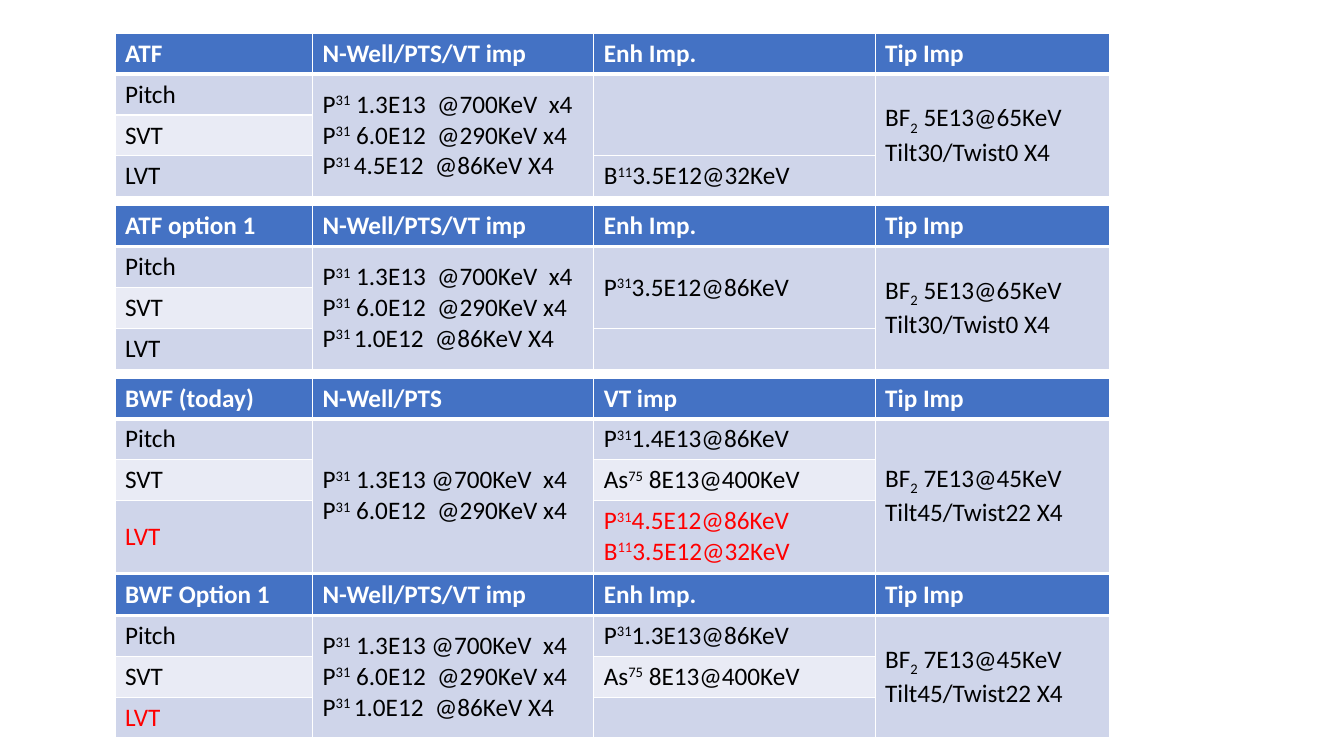
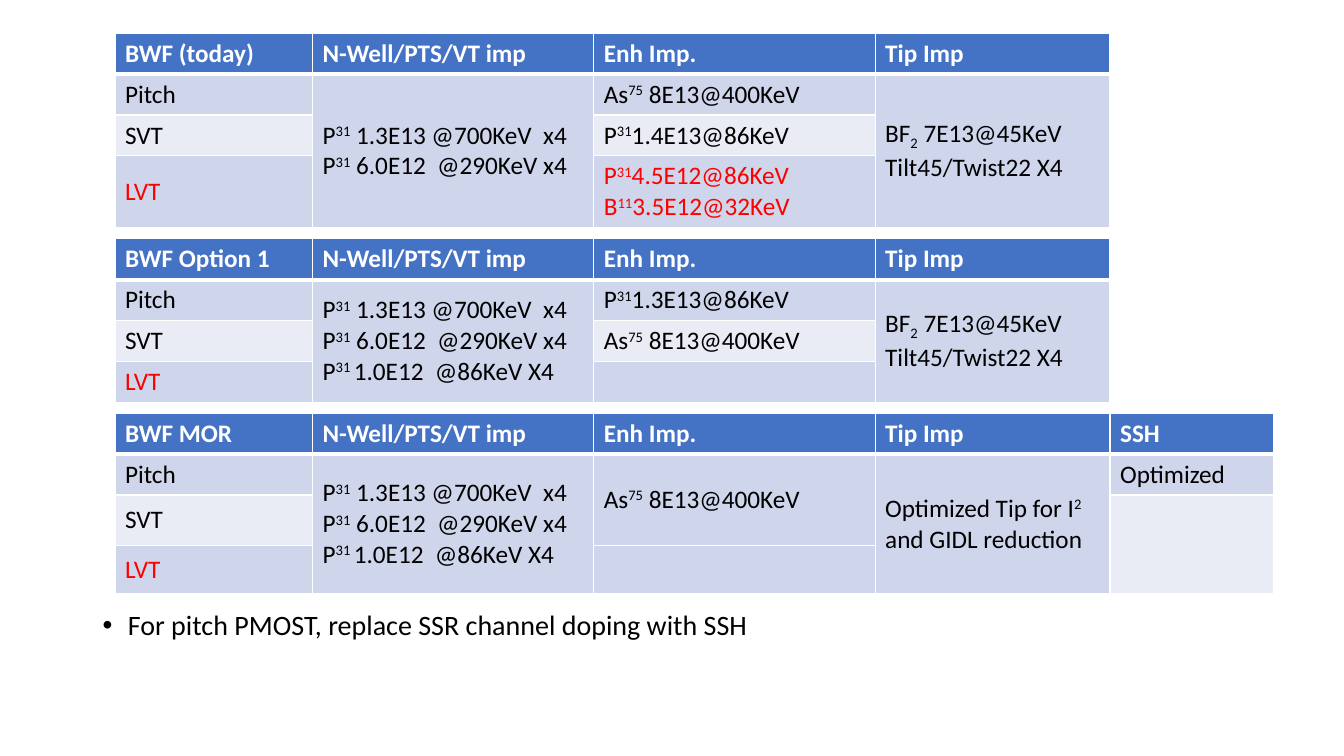
import pptx
import pptx.dml.color
import pptx.enum.text
import pptx.oxml
import pptx.oxml.ns
import pptx.util
from pptx.util import Inches

# Shared layout and table content
TABLE_LEFT = 1.14
COLUMN_WIDTHS = [1.96, 2.79, 2.79, 2.33, 1.62]
ROW_HEIGHTS = [0.4, 0.4, 0.4, 0.4]
TWO_LINE_HEIGHTS = [0.4, 0.4, 0.4, 0.7]
MOR_HEIGHTS = [0.4, 0.4, 0.5, 0.48]

# In a column, None continues the cell above; {^..} is raised, {_..} lowered
DEVICES = ["Pitch", "SVT", "LVT"]
ATF_HEADS = ["N-Well/PTS/VT imp", "Enh Imp.", "Tip Imp"]
ATF_WELL = "P{^31} 1.3E13  @700KeV  x4\nP{^31} 6.0E12  @290KeV x4"
BWF_WELL = "P{^31} 1.3E13 @700KeV  x4\nP{^31} 6.0E12  @290KeV x4"
LOW_WELL = "\nP{^31 }1.0E12  @86KeV X4"
ATF_TIP = "BF{_2} 5E13@65KeV Tilt30/Twist0 X4"
BWF_TIP = "BF{_2} 7E13@45KeV Tilt45/Twist22 X4"
ARSENIC = "As{^75} 8E13@400KeV"
PITCH_TODAY = "P{^31}1.4E13@86KeV"
BORON = "B{^11}3.5E12@32KeV"
LVT_TODAY = "P{^31}4.5E12@86KeV\n" + BORON
OPTION_ENH = ["P{^31}1.3E13@86KeV", ARSENIC, ""]


def color(hex_string):
    return pptx.dml.color.RGBColor.from_string(hex_string)


def merged(text):
    return [text, None, None]


def script_pieces(line):
    """Split a line into (text, baseline) pairs."""
    head, *tails = line.split("{")
    pieces = [(head, 0)]
    for tail in tails:
        script, rest = tail[1:].split("}")
        pieces += [(script, 30000 if tail[0] == "^" else -25000), (rest, 0)]
    return [piece for piece in pieces if piece[0]]


class Deck:
    FONT = "Calibri"
    WHITE, BLACK, RED = "FFFFFF", "000000", "FF0000"
    HEADER = "4472C4"
    BANDS = ["E9EBF5", "CFD5EA"]

    def __init__(self):
        self.presentation = pptx.Presentation()
        self.presentation.slide_width = Inches(13.33)
        self.presentation.slide_height = Inches(7.5)
        self.slide = None

    def add_slide(self):
        self.slide = self.presentation.slides.add_slide(
            self.presentation.slide_layouts[6])

    def style(self, run, size, ink, bold=False):
        run.font.name = self.FONT
        run.font.size = pptx.util.Pt(size)
        run.font.bold = bold
        run.font.color.rgb = color(ink)

    def border(self, cell, row):
        properties = cell._tc.get_or_add_tcPr()
        for side in "LRTB":
            under_header = (row, side) in [(0, "B"), (1, "T")]
            width = pptx.util.Pt(3 if under_header else 1)
            properties.append(pptx.oxml.parse_xml(
                f'<a:ln{side} {pptx.oxml.ns.nsdecls("a")} w="{width}">'
                f'<a:solidFill><a:srgbClr val="{self.WHITE}"/></a:solidFill>'
                f'</a:ln{side}>'))

    def fill_cell(self, cell, row, text, ink):
        self.border(cell, row)
        cell.fill.solid()
        cell.fill.fore_color.rgb = color(
            self.BANDS[row % 2] if row else self.HEADER)
        cell.vertical_anchor = pptx.enum.text.MSO_ANCHOR.MIDDLE
        frame = cell.text_frame
        for index, line in enumerate((text or "").split("\n")):
            paragraph = frame.add_paragraph() if index else frame.paragraphs[0]
            for piece, baseline in script_pieces(line):
                run = paragraph.add_run()
                run.text = piece
                self.style(run, 18, ink, bold=row == 0)
                if baseline:
                    run._r.get_or_add_rPr().set("baseline", str(baseline))

    def implant_table(self, top, title, heads, columns, heights=ROW_HEIGHTS,
                      lvt_ink=RED):
        contents = [[head, *body] for head, body in
                    zip([title, *heads], [DEVICES, *columns])]
        widths = COLUMN_WIDTHS[:len(contents)]
        table = self.slide.shapes.add_table(
            len(heights), len(widths), Inches(TABLE_LEFT), Inches(top),
            Inches(sum(widths)), Inches(sum(heights))).table
        for row, height in enumerate(heights):
            table.rows[row].height = Inches(height)
        inks = [self.WHITE, self.BLACK, self.BLACK, lvt_ink]
        for col, cells in enumerate(contents):
            table.columns[col].width = Inches(widths[col])
            start = 0
            for row, text in enumerate(cells):
                self.fill_cell(table.cell(row, col), row, text, inks[row])
                if text is not None:
                    start = row
                elif row + 1 == len(cells) or cells[row + 1] is not None:
                    table.cell(start, col).merge(table.cell(row, col))

    def bullet(self, left, top, width, height, text):
        frame = self.slide.shapes.add_textbox(
            Inches(left), Inches(top), Inches(width), Inches(height)).text_frame
        frame.word_wrap = True
        paragraph = frame.paragraphs[0]
        paragraph.text = text
        paragraph.line_spacing = 0.9
        paragraph.space_before = pptx.util.Pt(10)
        self.style(paragraph.runs[0], 20, self.BLACK)
        properties = paragraph._p.get_or_add_pPr()
        properties.set("marL", str(Inches(0.25)))
        properties.set("indent", str(Inches(-0.25)))
        for mark in ('buFont typeface="Arial"', 'buChar char="•"'):
            properties.append(pptx.oxml.parse_xml(
                f'<a:{mark} {pptx.oxml.ns.nsdecls("a")}/>'))


def main():
    deck = Deck()
    option_columns = [merged(BWF_WELL + LOW_WELL), OPTION_ENH, merged(BWF_TIP)]

    # Slide 1: ATF and BWF implants with their options
    deck.add_slide()
    deck.implant_table(
        0.33, "ATF", ATF_HEADS,
        [merged(ATF_WELL + "\nP{^31 }4.5E12  @86KeV X4"),
         ["", None, BORON], merged(ATF_TIP)], lvt_ink=deck.BLACK)
    deck.implant_table(
        2.04, "ATF option 1", ATF_HEADS,
        [merged(ATF_WELL + LOW_WELL),
         ["P{^31}3.5E12@86KeV", None, ""], merged(ATF_TIP)],
        lvt_ink=deck.BLACK)
    deck.implant_table(
        3.75, "BWF (today)", ["N-Well/PTS", "VT imp", "Tip Imp"],
        [merged(BWF_WELL), [PITCH_TODAY, ARSENIC, LVT_TODAY], merged(BWF_TIP)],
        TWO_LINE_HEIGHTS)
    deck.implant_table(5.7, "BWF Option 1", ATF_HEADS, option_columns)

    # Slide 2: BWF options and SSH
    deck.add_slide()
    deck.implant_table(
        0.33, "BWF (today)", ATF_HEADS,
        [merged(BWF_WELL), [ARSENIC, PITCH_TODAY, LVT_TODAY], merged(BWF_TIP)],
        TWO_LINE_HEIGHTS)
    deck.implant_table(2.37, "BWF Option 1", ATF_HEADS, option_columns)
    deck.implant_table(
        4.1, "BWF MOR", [*ATF_HEADS, "SSH"],
        [merged(BWF_WELL + LOW_WELL), [ARSENIC, None, ""],
         merged("Optimized Tip for I{^2} and GIDL reduction"),
         ["Optimized", "", None]], MOR_HEIGHTS)
    deck.bullet(0.92, 6.02, 11.5, 1.15,
                "For pitch PMOST, replace SSR channel doping with SSH")

    deck.presentation.save("out.pptx")


if __name__ == "__main__":
    main()
